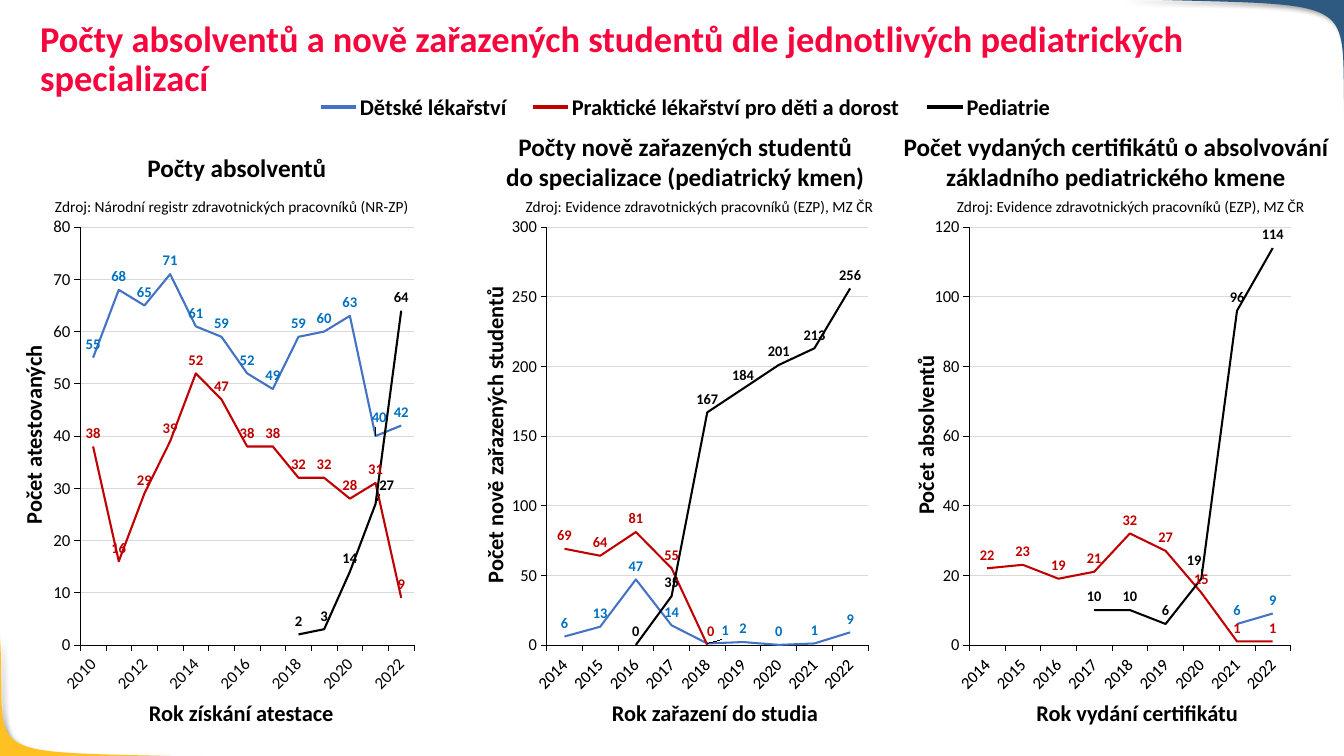
from dataclasses import dataclass, field
from typing import Optional

import pptx
import pptx.chart.data
import pptx.dml.color
import pptx.enum.chart
import pptx.enum.shapes
import pptx.enum.text
import pptx.oxml
import pptx.oxml.ns
import pptx.util
from pptx.util import Cm

FONT = "Calibri"
BLACK, BLUE, RED = "000000", "4472C4", "C00000"
LINE_COLORS = (BLUE, RED, BLACK)
LABEL_COLORS = ("0070C0", RED, BLACK)
CHART_TOP, CHART_HEIGHT = 5.28, 12.73
NO_LEADER_LINES = (
    '<c:ext uri="{CE6537A1-D6FC-4f65-9D91-7224C49458BB}" '
    'xmlns:c15="http://schemas.microsoft.com/office/drawing/2012/chart">'
    '<c15:showLeaderLines val="0"/></c:ext>')
Values = list[Optional[int]]
Point = tuple[float, float]


@dataclass
class LegendEntry:
    text: str
    color: str
    left: float
    text_width: float


@dataclass
class Panel:
    heading: str
    heading_box: tuple[float, float, float, float]
    source: str
    source_left: float
    chart_left: float
    chart_width: float
    first_year: int
    series: tuple[Values, Values, Values]
    maximum: int
    step: int
    year_title: str
    year_center: float
    year_width: float
    count_title: str
    count_center: float
    count_width: float
    # (series, point) -> label offset as a share of the chart
    label_shifts: dict[tuple[int, int], Point] = field(default_factory=dict)


@dataclass
class Corner:
    start: Point
    control_1: Point
    control_2: Point
    end: Point
    tip: Point
    color: str


EZP = "Zdroj: Evidence zdravotnických pracovníků (EZP), MZ ČR "

CORNERS = [
    Corner((5.41, 19.08), (-0.86, 18.9), (0.2, 19.28), (0, 16), (-0.03, 19.08), "FFC121"),
    Corner((28.22, -0.03), (34.8, 0.18), (33.68, -0.25), (33.91, 3.61), (33.91, -0.03), "2E5980"),
]

LEGEND = [
    LegendEntry("Dětské lékařství", BLUE, 8.08, 3.73),
    LegendEntry("Praktické lékařství pro děti a dorost", RED, 13.42, 8.36),
    LegendEntry("Pediatrie", BLACK, 23.37, 2.13),
]

PANELS = [
    Panel("Počty absolventů", (1.12, 3.71, 9.7, 1.02),
          "Zdroj: Národní registr zdravotnických pracovníků (NR-ZP)", 1.07,
          1.32, 9.37, 2010,
          ([55, 68, 65, 71, 61, 59, 52, 49, 59, 60, 63, 40, 42],
           [38, 16, 29, 39, 52, 47, 38, 38, 32, 32, 28, 31, 9],
           [None] * 8 + [2, 3, 14, 27, 64]),
          80, 10, "Rok získání atestace", 6.08, 5.21, "Počet atestovaných", 0.84, 5.08,
          {(0, 11): (0.01, -0.01), (2, 11): (0.03, -0.01)}),
    Panel("Počty nově zařazených studentů do specializace (pediatrický kmen)",
          (12.42, 3.18, 9.7, 1.8), EZP, 12.9, 12.9, 9.22, 2014,
          ([6, 13, 47, 14, 1, 2, 0, 1, 9],
           [69, 64, 81, 55, 0] + [None] * 4,
           [None] * 2 + [0, 35, 167, 184, 201, 213, 256]),
          300, 50, "Rok zařazení do studia", 18.02, 5.77,
          "Počet nově zařazených studentů", 12.47, 8.08,
          {(0, 4): (0.05, 0), (1, 4): (0.01, 0)}),
    Panel("Počet vydaných certifikátů o absolvování základního pediatrického kmene",
          (22.5, 3.18, 11.25, 1.8), EZP, 23.77, 23.55, 9.22, 2014,
          ([None] * 7 + [6, 9],
           [22, 23, 19, 21, 32, 27, 15, 1, 1],
           [None] * 3 + [10, 10, 6, 19, 96, 114]),
          120, 20, "Rok vydání certifikátu", 28.66, 5.66, "Počet absolventů", 23.32, 4.57,
          {(2, 6): (-0.02, -0.01)}),
]


def rgb(value: str) -> pptx.dml.color.RGBColor:
    return pptx.dml.color.RGBColor.from_string(value)


def set_font(font, size: float, color: str, bold: bool = False) -> None:
    font.name, font.size, font.bold = FONT, pptx.util.Pt(size), bold
    font.color.rgb = rgb(color)


def set_line(line, color: str, width: float) -> None:
    line.color.rgb, line.width = rgb(color), pptx.util.Pt(width)


def xml(tag: str, attributes: str = "", inner: str = ""):
    return pptx.oxml.parse_xml(
        f"<{tag} {pptx.oxml.ns.nsdecls('a', 'c')} {attributes}>{inner}</{tag}>")


def manual_layout(**settings):
    inner = "".join(f'<c:{name} val="{value}"/>' for name, value in settings.items())
    return xml("c:layout", inner=f"<c:manualLayout>{inner}</c:manualLayout>")


def add_text(slide, text: str, left: float, top: float, width: float, height: float,
             size: float, color: str = BLACK, bold: bool = True, centered: bool = True,
             wrap: bool = False, inset: bool = True):
    box = slide.shapes.add_textbox(Cm(left), Cm(top), Cm(width), Cm(height))
    frame = box.text_frame
    frame.word_wrap = wrap
    frame.auto_size = pptx.enum.text.MSO_AUTO_SIZE.SHAPE_TO_FIT_TEXT
    if not inset:
        frame.margin_left = frame.margin_right = frame.margin_top = frame.margin_bottom = 0
    paragraph = frame.paragraphs[0]
    if centered:
        paragraph.alignment = pptx.enum.text.PP_ALIGN.CENTER
    run = paragraph.add_run()
    run.text = text
    set_font(run.font, size, color, bold)
    return box


def add_corner(slide, corner: Corner) -> None:
    def on_curve(t: float) -> Point:
        weights = ((1 - t) ** 3, 3 * t * (1 - t) ** 2, 3 * t * t * (1 - t), t ** 3)
        knots = (corner.start, corner.control_1, corner.control_2, corner.end)
        return tuple(sum(w * k[axis] for w, k in zip(weights, knots)) for axis in (0, 1))

    outline = [on_curve(i / 40) for i in range(41)] + [corner.tip]
    points = [(Cm(x), Cm(y)) for x, y in outline]
    builder = slide.shapes.build_freeform(*points[0])
    builder.add_line_segments(points[1:], close=True)
    shape = builder.convert_to_shape()
    shape.fill.solid()
    shape.fill.fore_color.rgb = rgb(corner.color)
    shape.line.fill.background()
    shape.shadow.inherit = False
    effects = shape._element.spPr.find(pptx.oxml.ns.qn("a:effectLst"))
    effects.append(xml("a:outerShdw", 'blurRad="50800" dist="38100" dir="2700000"',
                       '<a:srgbClr val="000000"><a:alpha val="40000"/></a:srgbClr>'))


def add_legend_entry(slide, entry: LegendEntry) -> None:
    key = slide.shapes.add_connector(pptx.enum.shapes.MSO_CONNECTOR.STRAIGHT,
                                     Cm(entry.left), Cm(2.69), Cm(entry.left + 0.9), Cm(2.69))
    set_line(key.line, entry.color, 3)
    key._element.spPr.append(xml("a:effectLst"))
    add_text(slide, entry.text, entry.left + 0.99, 2.36, entry.text_width, 0.69, 16,
             centered=False, inset=False)


def add_line_chart(slide, panel: Panel) -> None:
    data = pptx.chart.data.CategoryChartData()
    data.categories = [str(panel.first_year + i) for i in range(len(panel.series[0]))]
    for entry, values in zip(LEGEND, panel.series):
        data.add_series(entry.text, values)
    chart = slide.shapes.add_chart(
        pptx.enum.chart.XL_CHART_TYPE.LINE, Cm(panel.chart_left), Cm(CHART_TOP),
        Cm(panel.chart_width), Cm(CHART_HEIGHT), data).chart
    chart.has_legend = chart.has_title = False
    set_font(chart.font, 12, BLACK)
    plot_area = chart._chartSpace.chart.plotArea
    for layout in plot_area.xpath("c:layout"):
        plot_area.remove(layout)
    plot_area.insert(0, manual_layout(layoutTarget="inner", xMode="edge", yMode="edge",
                                      x=0.075, y=0.035, w=0.898, h=0.827))

    # Axes
    years, counts = chart.category_axis, chart.value_axis
    for axis in (years, counts):
        axis.major_tick_mark = pptx.enum.chart.XL_TICK_MARK.OUTSIDE
        axis.minor_tick_mark = pptx.enum.chart.XL_TICK_MARK.NONE
        set_font(axis.tick_labels.font, 12, BLACK)
        set_line(axis.format.line, BLACK, 0.5)
    years._element.xpath("c:txPr/a:bodyPr")[0].set("rot", "-2700000")
    counts.minimum_scale, counts.maximum_scale = 0, panel.maximum
    counts.major_unit = panel.step
    counts.has_major_gridlines = True
    set_line(counts.major_gridlines.format.line, "D9D9D9", 0.5)

    # Series and value labels
    above = pptx.enum.chart.XL_LABEL_POSITION.ABOVE
    chart.plots[0].vary_by_categories = False
    for index, series in enumerate(chart.plots[0].series):
        series.smooth = False
        series.marker.style = pptx.enum.chart.XL_MARKER_STYLE.NONE
        set_line(series.format.line, LINE_COLORS[index], 1.5)
        series.data_labels.show_value = True
        shifts = {p: shift for (s, p), shift in panel.label_shifts.items() if s == index}
        shifted = [series.points[p].data_label for p in shifts]
        for labels in [series.data_labels, *shifted]:
            labels.position = above
            set_font(labels.font, 10.5, LABEL_COLORS[index], True)
        for label, (x, y) in zip(series._element.xpath("c:dLbls/c:dLbl"), shifts.values()):
            label.insert(1, manual_layout(x=x, y=y))
        series._element.xpath("c:dLbls")[0].append(xml("c:extLst", inner=NO_LEADER_LINES))


def add_panel(slide, panel: Panel) -> None:
    add_line_chart(slide, panel)
    add_text(slide, panel.heading, *panel.heading_box, 18, wrap=True)
    add_text(slide, panel.source, panel.source_left, 4.85, 9.55, 0.74, 11, bold=False)
    add_text(slide, panel.year_title, panel.year_center - panel.year_width / 2, 17.5,
             panel.year_width, 0.94, 16)
    count_title = add_text(slide, panel.count_title, panel.count_center - panel.count_width / 2,
                           10.49, panel.count_width, 0.94, 16)
    count_title.rotation = 270


def main() -> None:
    presentation = pptx.Presentation()
    presentation.slide_width, presentation.slide_height = Cm(33.87), Cm(19.05)
    slide = presentation.slides.add_slide(presentation.slide_layouts[6])

    # Corner decoration
    for corner in CORNERS:
        add_corner(slide, corner)

    # Title
    title = add_text(slide, "Počty absolventů a nově zařazených studentů dle jednotlivých "
                     "pediatrických specializací", 0.76, 0.43, 33.1, 2.16, 26, "F6063C",
                     centered=False, wrap=True).text_frame
    title.auto_size = pptx.enum.text.MSO_AUTO_SIZE.NONE
    title.vertical_anchor = pptx.enum.text.MSO_ANCHOR.MIDDLE
    title.paragraphs[0].line_spacing = 0.9

    # Shared legend and the three charts
    for entry in LEGEND:
        add_legend_entry(slide, entry)
    for panel in PANELS:
        add_panel(slide, panel)
    presentation.save("out.pptx")


if __name__ == "__main__":
    main()
